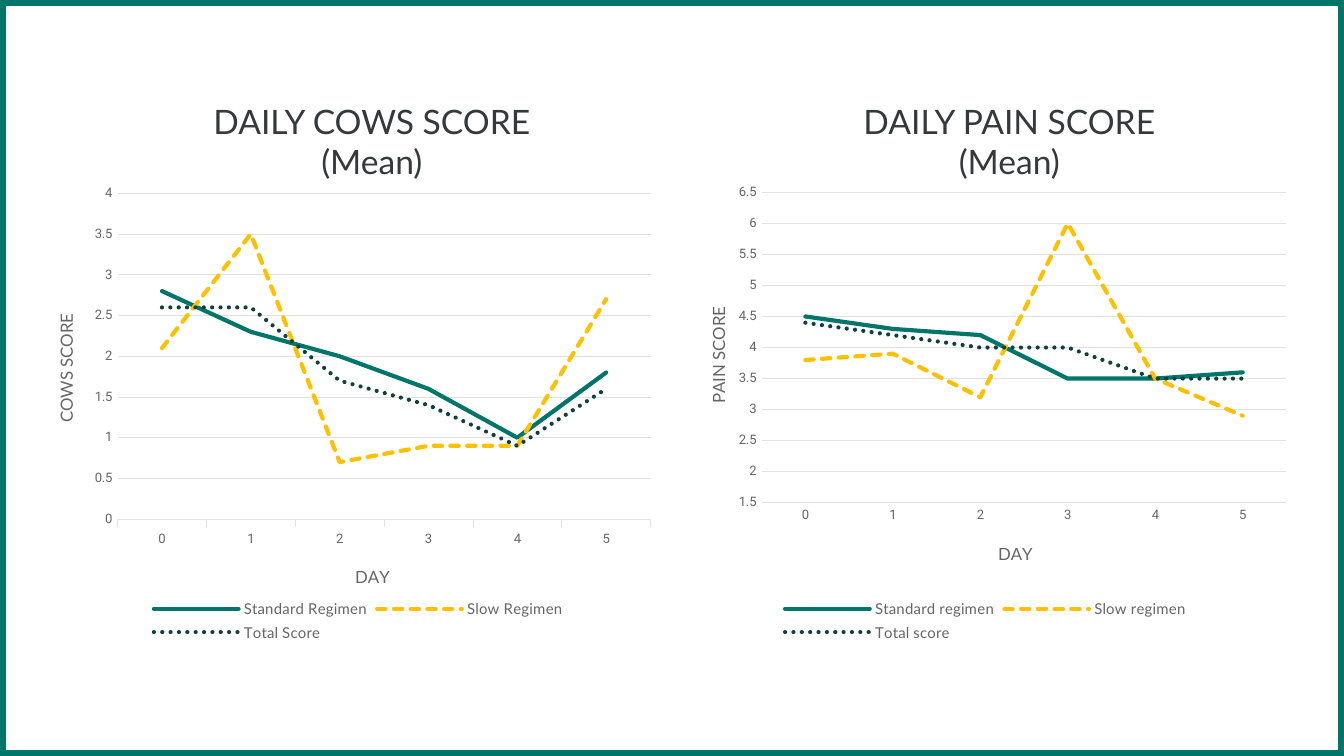
from lxml import etree
from pptx import Presentation
from pptx import util as u
from pptx.chart.data import CategoryChartData
from pptx.dml.color import RGBColor
from pptx.enum import chart as charts, dml, shapes, text
from pptx.oxml.ns import qn

GREEN, YELLOW, DARK = "007569", "FFC000", "10403B"
INK, GREY, GRID = "36393B", "656565", "E0E1E3"
DAYS = ["0", "1", "2", "3", "4", "5"]
SERIES_STYLES = [
    (GREEN, dml.MSO_LINE.SOLID),
    (YELLOW, dml.MSO_LINE.SQUARE_DOT),
    (DARK, dml.MSO_LINE.ROUND_DOT),
]


def color(hex_string):
    return RGBColor.from_string(hex_string)


def set_layout(parent, index, inner=False, **fractions):
    """Fix the place of a chart part, in fractions of the chart's size."""
    for old in parent.findall(qn("c:layout")):
        parent.remove(old)
    layout = etree.Element(qn("c:layout"))
    manual = etree.SubElement(layout, qn("c:manualLayout"))
    values = {"xMode": "edge", "yMode": "edge", **fractions}
    if inner:
        values = {"layoutTarget": "inner", **values}
    for name, value in values.items():
        etree.SubElement(manual, qn(f"c:{name}")).set("val", str(value))
    parent.insert(index, layout)


class Deck:
    heading_font = "Lato"
    number_font = "Roboto"

    def __init__(self, width, height):
        self.presentation = Presentation()
        self.presentation.slide_width = u.Pt(width)
        self.presentation.slide_height = u.Pt(height)
        self.width, self.height = width, height
        self.slide = self.presentation.slides.add_slide(self.presentation.slide_layouts[6])

    def style_font(self, font, size, hex_string, name):
        font.size, font.name, font.bold = u.Pt(size), name, False
        font.color.rgb = color(hex_string)

    def style_line(self, line, hex_string, width):
        line.color.rgb = color(hex_string)
        line.width = u.Pt(width)

    def border(self, hex_string, width):
        shape = self.slide.shapes.add_shape(
            shapes.MSO_SHAPE.RECTANGLE, 0, 0, u.Pt(self.width), u.Pt(self.height))
        shape.shadow.inherit = False
        shape.fill.background()
        self.style_line(shape.line, hex_string, width)

    def heading(self, left, top, width, height, words):
        box = self.slide.shapes.add_textbox(*map(u.Pt, (left, top, width, height)))
        box.text_frame.word_wrap = True
        box.text_frame.text = words
        paragraph = box.text_frame.paragraphs[0]
        paragraph.alignment = text.PP_ALIGN.CENTER
        self.style_font(paragraph.runs[0].font, 18, INK, self.heading_font)

    def axis(self, axis, title, title_place, tick_mark):
        axis.has_title = True
        frame = axis.axis_title.text_frame
        frame.text = title
        self.style_font(frame.paragraphs[0].runs[0].font, 9, GREY, self.heading_font)
        x, y = title_place
        set_layout(axis.axis_title._element, 1, x=x, y=y)
        self.style_font(axis.tick_labels.font, 7, GREY, self.number_font)
        axis.major_tick_mark = tick_mark
        axis.minor_tick_mark = charts.XL_TICK_MARK.NONE

    def line_chart(self, left, top, width, height, series, value_title, scale,
                   plot, day_place, value_place, tick_mark, thin):
        data = CategoryChartData()
        data.categories = DAYS
        for name, values in series.items():
            data.add_series(name, values)
        chart = self.slide.shapes.add_chart(
            charts.XL_CHART_TYPE.LINE, *map(u.Pt, (left, top, width, height)), data).chart
        chart.has_title = False
        self.style_font(chart.font, 10.5, INK, self.number_font)
        chart.plots[0].vary_by_categories = False
        x, y, w, h = plot
        set_layout(chart._chartSpace.chart.plotArea, 0, inner=True, x=x, y=y, w=w, h=h)

        # Axes
        days, scores = chart.category_axis, chart.value_axis
        self.axis(days, "DAY", day_place, tick_mark)
        self.axis(scores, value_title, value_place, charts.XL_TICK_MARK.NONE)
        self.style_line(days.format.line, GRID, thin)
        scores.format.line.fill.background()
        scores.has_major_gridlines = True
        self.style_line(scores.major_gridlines.format.line, GRID, thin)
        scores.minimum_scale, scores.maximum_scale = scale
        scores.major_unit = 0.5

        # Series
        for line, (hex_string, dash) in zip(chart.plots[0].series, SERIES_STYLES):
            line.smooth = False
            line.marker.style = charts.XL_MARKER_STYLE.NONE
            self.style_line(line.format.line, hex_string, 2.25)
            line.format.line.dash_style = dash
            line._element.find(f"{qn('c:spPr')}/{qn('a:ln')}").set("cap", "rnd")

        # Legend
        chart.has_legend = True
        chart.legend.position = charts.XL_LEGEND_POSITION.BOTTOM
        chart.legend.include_in_layout = False
        self.style_font(chart.legend.font, 8, GREY, self.heading_font)


def main():
    deck = Deck(720, 405)
    deck.border(GREEN, 6)

    # Charts, side by side
    chart_top, chart_width, chart_height = 94.5, 336, 252
    deck.line_chart(
        24, chart_top, chart_width, chart_height,
        {"Standard Regimen": [2.8, 2.3, 2, 1.6, 1, 1.8],
         "Slow Regimen": [2.1, 3.5, 0.7, 0.9, 0.9, 2.7],
         "Total Score": [2.6, 2.6, 1.7, 1.4, 0.9, 1.6]},
        "COWS SCORE", scale=(0, 4), plot=(0.116, 0.036, 0.85, 0.693),
        day_place=(0.49, 0.82), value_place=(0.01, 0.285),
        tick_mark=charts.XL_TICK_MARK.OUTSIDE, thin=0.31)
    deck.line_chart(
        360, chart_top, chart_width, chart_height,
        {"Standard regimen": [4.5, 4.3, 4.2, 3.5, 3.5, 3.6],
         "Slow regimen": [3.8, 3.9, 3.2, 6, 3.5, 2.9],
         "Total score": [4.4, 4.2, 4, 4, 3.5, 3.5]},
        "PAIN SCORE", scale=(1.5, 6.5), plot=(0.143, 0.034, 0.837, 0.66),
        day_place=(0.515, 0.77), value_place=(0.05, 0.27),
        tick_mark=charts.XL_TICK_MARK.NONE, thin=0.75)

    # Headings
    deck.heading(98.5, 50.5, 201.5, 51, "DAILY COWS SCORE (Mean)")
    deck.heading(455.5, 50.5, 170.5, 51, "DAILY PAIN SCORE (Mean)")

    deck.presentation.save("out.pptx")


if __name__ == "__main__":
    main()
